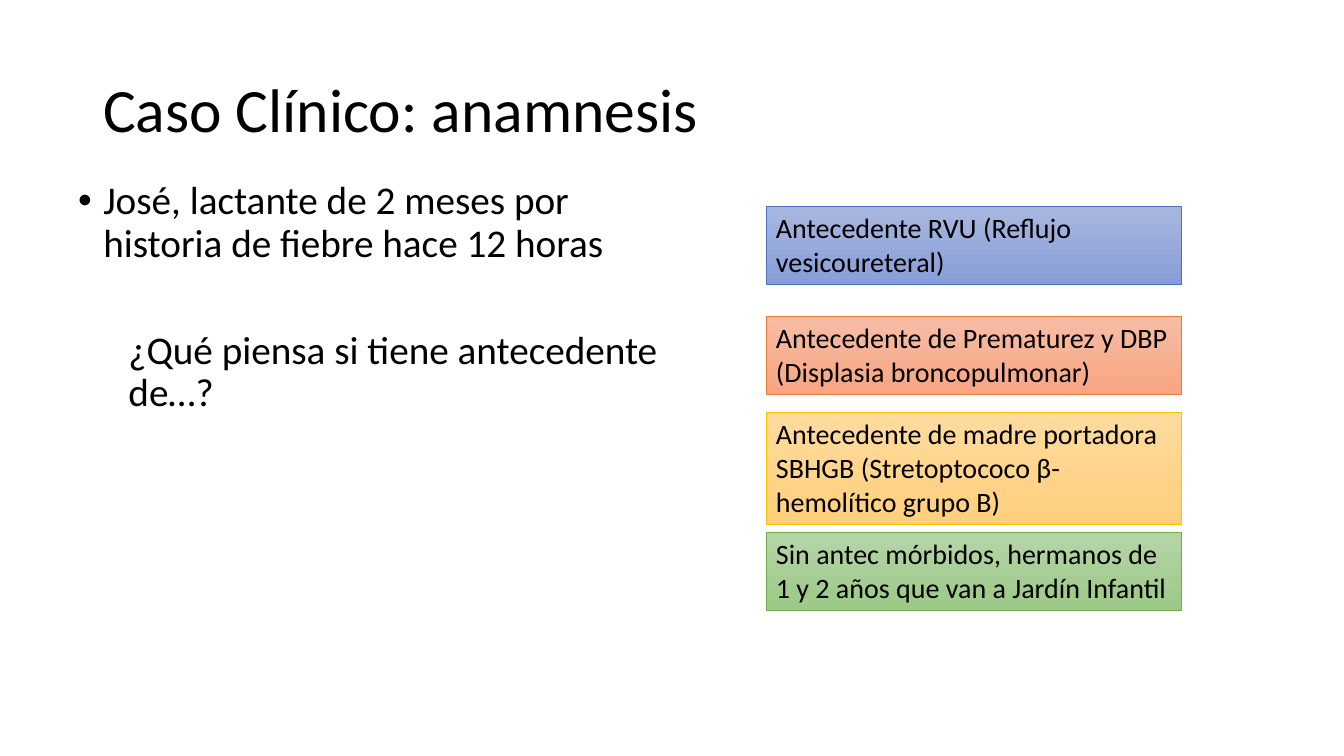
from lxml import etree
from pptx import Presentation
from pptx import util as u
from pptx.dml.color import RGBColor
from pptx.enum import shapes, text
from pptx.oxml.ns import qn

PX = 12192000 / 1344
BLACK = RGBColor(0x00, 0x00, 0x00)
BLUE = RGBColor(0x44, 0x72, 0xC4)
BLUE_TOP = RGBColor(0xA8, 0xB7, 0xDF)
BLUE_BOTTOM = RGBColor(0x88, 0x9E, 0xD7)
ORANGE = RGBColor(0xED, 0x7D, 0x31)
ORANGE_TOP = RGBColor(0xF7, 0xBD, 0xA5)
ORANGE_BOTTOM = RGBColor(0xF8, 0xA5, 0x82)
GOLD = RGBColor(0xFF, 0xC0, 0x00)
GOLD_TOP = RGBColor(0xFF, 0xDB, 0x9E)
GOLD_BOTTOM = RGBColor(0xFF, 0xD0, 0x7C)
GREEN = RGBColor(0x70, 0xAD, 0x47)
GREEN_TOP = RGBColor(0xB5, 0xD5, 0xA7)
GREEN_BOTTOM = RGBColor(0x9C, 0xC9, 0x87)


def px(*lengths):
    """Turn pixel lengths into EMU."""
    return [u.Emu(round(length * PX)) for length in lengths]


def write(paragraph, words, size, line_spacing=1.0, space_before=0):
    paragraph.alignment = text.PP_ALIGN.LEFT
    paragraph.line_spacing = line_spacing
    paragraph.space_before = u.Pt(space_before)
    run = paragraph.add_run()
    run.text = words
    run.font.name = "Calibri"
    run.font.size = u.Pt(size)
    run.font.color.rgb = BLACK


presentation = Presentation()
presentation.slide_width, presentation.slide_height = px(1344, 756)
slide = presentation.slides.add_slide(presentation.slide_layouts[1])

# Title
title = slide.shapes.title
title.left, title.top, title.width, title.height = px(93, 40, 1159, 146)
title.text_frame.vertical_anchor = text.MSO_ANCHOR.MIDDLE
title.text_frame.auto_size = text.MSO_AUTO_SIZE.NONE
write(title.text_frame.paragraphs[0], "Caso Clínico: anamnesis", 44, 0.9)

# Case and question
body = slide.placeholders[1]
body.left, body.top, body.width, body.height = px(68, 176, 628, 499)
frame = body.text_frame
frame.vertical_anchor = text.MSO_ANCHOR.TOP
frame.auto_size = text.MSO_AUTO_SIZE.NONE

case = frame.paragraphs[0]
write(case, "José, lactante de 2 meses por historia de fiebre hace 12 horas", 28, 0.9, 10)
question = frame.add_paragraph()
question.level = 1
write(question, "¿Qué piensa si tiene antecedente de…?", 28, 0.9, 46)

for paragraph, margin, indent, bullet in [(case, 0.25, -0.25, "•"), (question, 0.5, 0, None)]:
    properties = paragraph._p.get_or_add_pPr()
    properties.set("marL", str(u.Inches(margin)))
    properties.set("indent", str(u.Inches(indent)))
    if bullet:
        etree.SubElement(properties, qn("a:buChar")).set("char", bullet)
    else:
        etree.SubElement(properties, qn("a:buNone"))

# Possible histories
histories = [
    (206, 78, "Antecedente RVU (Reflujo vesicoureteral)", BLUE, BLUE_TOP, BLUE_BOTTOM),
    (316, 78, "Antecedente de Prematurez y DBP (Displasia broncopulmonar)",
     ORANGE, ORANGE_TOP, ORANGE_BOTTOM),
    (412, 112, "Antecedente de madre portadora SBHGB (Stretoptococo β- hemolítico grupo B)",
     GOLD, GOLD_TOP, GOLD_BOTTOM),
    (532, 78, "Sin antec mórbidos, hermanos de 1 y 2 años que van a Jardín Infantil",
     GREEN, GREEN_TOP, GREEN_BOTTOM),
]
for top, height, words, outline, top_color, bottom_color in histories:
    box = slide.shapes.add_shape(shapes.MSO_SHAPE.RECTANGLE, *px(766, top, 415, height))
    box.shadow.inherit = False
    box.fill.gradient()
    box.fill.gradient_angle = 270
    for stop, color in zip(box.fill.gradient_stops, (top_color, bottom_color)):
        stop.color.rgb = color
    box.line.color.rgb = outline
    box.line.width = u.Pt(0.5)
    box.text_frame.word_wrap = True
    box.text_frame.vertical_anchor = text.MSO_ANCHOR.TOP
    box.text_frame.auto_size = text.MSO_AUTO_SIZE.SHAPE_TO_FIT_TEXT
    write(box.text_frame.paragraphs[0], words, 20)

presentation.save("out.pptx")
